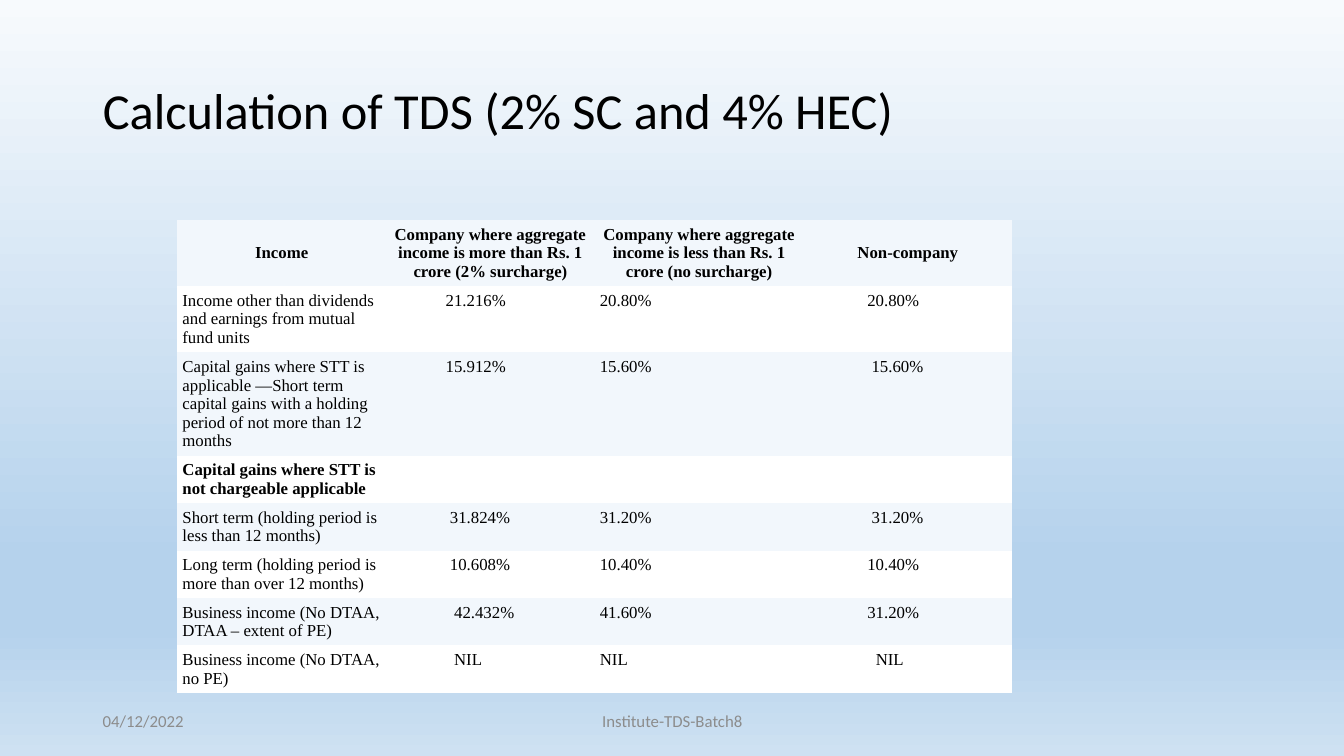
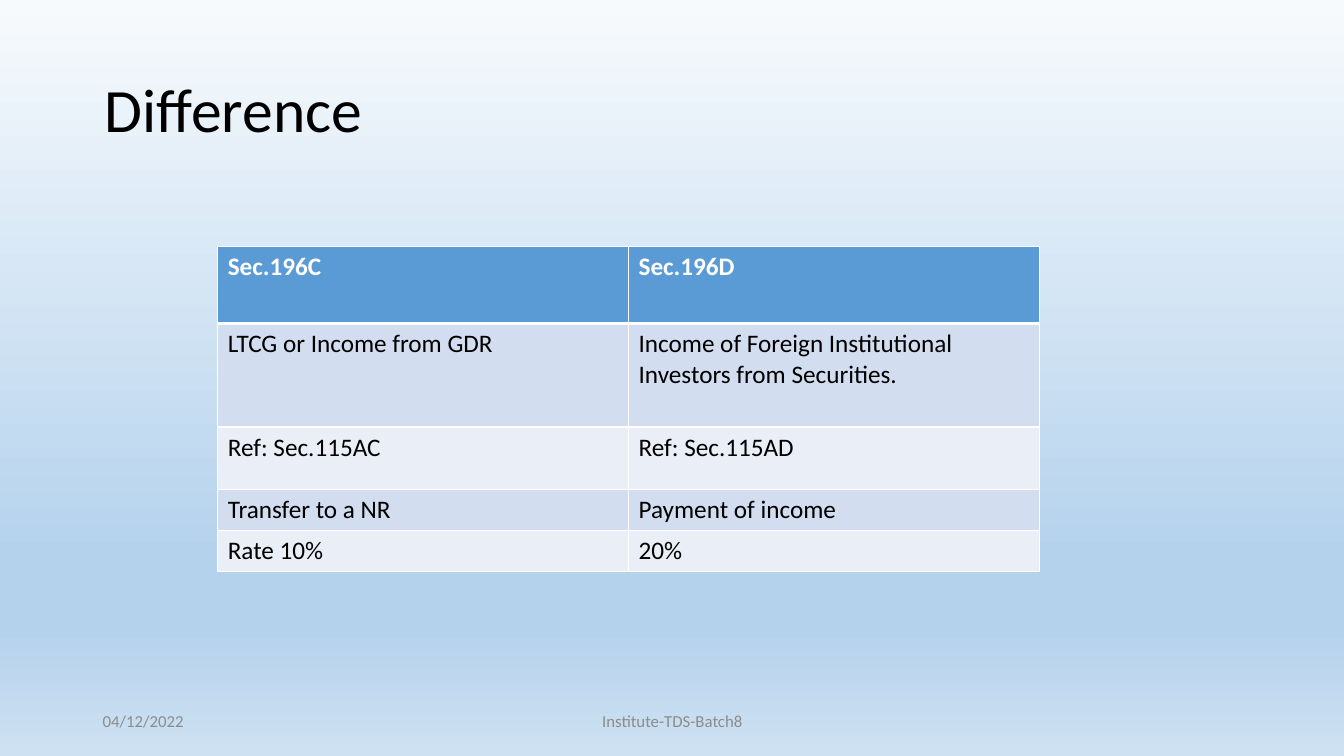
from copy import deepcopy

from lxml.etree import SubElement
from pptx import Presentation
from pptx.dml.color import RGBColor
from pptx.enum.text import MSO_ANCHOR as Anchor, MSO_AUTO_SIZE as AutoSize, PP_ALIGN as Align
from pptx.oxml.ns import qn
from pptx.util import Inches, Pt

BLACK = RGBColor(0x00, 0x00, 0x00)
WHITE = RGBColor(0xFF, 0xFF, 0xFF)
GREY = RGBColor(0x8C, 0x8C, 0x8C)
PALE_BLUE = RGBColor(0xF2, 0xF7, 0xFC)
HEADER_BLUE = RGBColor(0x5B, 0x9B, 0xD5)
BAND_DARK = RGBColor(0xD2, 0xDE, 0xEF)
BAND_LIGHT = RGBColor(0xEA, 0xEF, 0xF7)
SKY_TOP = RGBColor(0xF7, 0xFA, 0xFD)
SKY_DEEP = RGBColor(0xB5, 0xD2, 0xEC)
SKY_BOTTOM = RGBColor(0xCE, 0xE1, 0xF2)

SANS = "Calibri"
SERIF = "Times New Roman"
PLAIN_TABLE_STYLE = "{2D5ABB26-0587-4C30-8999-92F81FD0307C}"

presentation = Presentation()
presentation.slide_width = Inches(13.33)
presentation.slide_height = Inches(7.5)
COLUMN = presentation.slide_width / 100
ROW = presentation.slide_height / 100
title_only = presentation.slide_layouts[5]


def style_text(text_frame, size, color, font=SANS, bold=False, align=Align.LEFT):
    for paragraph in text_frame.paragraphs:
        paragraph.alignment = align
        for run in paragraph.runs:
            run.font.name = font
            run.font.size = Pt(size)
            run.font.bold = bold
            run.font.color.rgb = color


def add_table(slide, rows, left, top, column_width, row_heights, height):
    column_count = len(rows[0])
    frame = slide.shapes.add_table(
        len(rows), column_count, int(left * COLUMN), int(top * ROW),
        int(column_count * column_width * COLUMN), int(height * ROW))
    table = frame.table
    frame.element.find(".//" + qn("a:tableStyleId")).text = PLAIN_TABLE_STYLE
    for column in table.columns:
        column.width = int(column_width * COLUMN)
    for row, row_height, texts in zip(table.rows, row_heights, rows):
        row.height = int(row_height * ROW)
        for cell, text in zip(row.cells, texts):
            cell.text_frame.text = text
            cell.fill.solid()
    frame.height = int(height * ROW)
    return table


background = presentation.slide_master.background.fill
background.gradient()
background.gradient_angle = 270
stop_list = presentation.slide_master.element.find(".//" + qn("a:gsLst"))
for stop in list(stop_list):
    stop_list.append(deepcopy(stop))
sky = [(0, SKY_TOP), (0.74, SKY_DEEP), (0.83, SKY_DEEP), (1, SKY_BOTTOM)]
for stop, (position, color) in zip(background.gradient_stops, sky):
    stop.position = position
    stop.color.rgb = color

titles = [
    ("Calculation of TDS (2% SC and 4% HEC)", 36, 6.9, 5.33),
    ("Difference", 44, 7.05, 5.2),
]
for title_text, size, left, top in titles:
    title = presentation.slides.add_slide(title_only).shapes.title
    title.left, title.top = int(left * COLUMN), int(top * ROW)
    title.width, title.height = int(86.25 * COLUMN), int(19.33 * ROW)
    title.text_frame.text = title_text
    title.text_frame.auto_size = AutoSize.NONE
    title.text_frame.vertical_anchor = Anchor.MIDDLE
    title.text_frame.paragraphs[0].line_spacing = 0.9
    style_text(title.text_frame, size, BLACK)

rate_slide, difference_slide = presentation.slides

rate_rows = [
    ("Income", "Company where aggregate income is more than Rs. 1 crore (2% surcharge)",
     "Company where aggregate income is less than Rs. 1 crore (no surcharge)", "Non-company"),
    ("Income other than dividends and earnings from mutual fund units",
     "21.216%", "20.80%", "20.80%"),
    ("Capital gains where STT is applicable —Short term capital gains with a holding "
     "period of not more than 12 months", "15.912%", "15.60%", "15.60%"),
    ("Capital gains where STT is not chargeable applicable", "", "", ""),
    ("Short term (holding period is less than 12 months)", "31.824%", "31.20%", "31.20%"),
    ("Long term (holding period is more than over 12 months)", "10.608%", "10.40%", "10.40%"),
    ("Business income (No DTAA, DTAA – extent of PE)", "42.432%", "41.60%", "31.20%"),
    ("Business income (No DTAA, no PE)", "NIL", "NIL", "NIL"),
]
rate_heights = [8.8, 5.87, 11.2, 4.93, 4.93, 5.87, 4.93, 3.87]
surcharge_indents = [0, 39, 39, 0, 42, 42, 45, 45]
non_company_indents = [0, 42, 45, 0, 45, 42, 42, 48]
rate_table = add_table(rate_slide, rate_rows, 13.2, 29.07, 15.53, rate_heights, 69.2)
for row_index, row in enumerate(rate_table.rows):
    is_header = row_index == 0
    indents = (0, surcharge_indents[row_index], 0, non_company_indents[row_index])
    for cell, indent in zip(row.cells, indents):
        cell.fill.fore_color.rgb = WHITE if row_index % 2 else PALE_BLUE
        cell.margin_right = cell.margin_top = cell.margin_bottom = Inches(0.05)
        cell.margin_left = Inches(0.05) + Pt(indent)
        cell.vertical_anchor = Anchor.MIDDLE if is_header else Anchor.TOP
        style_text(cell.text_frame, 12, BLACK, SERIF, row_index in (0, 3),
                   Align.CENTER if is_header else Align.LEFT)

difference_rows = [
    ("Sec.196C", "Sec.196D"),
    ("LTCG or Income from GDR", "Income of Foreign Institutional Investors from Securities."),
    ("Ref: Sec.115AC", "Ref: Sec.115AD"),
    ("Transfer to a NR", "Payment of income"),
    ("Rate 10%", "20%"),
]
difference_heights = [10.2, 13.7, 8.27, 5.42, 5.42]
difference_table = add_table(difference_slide, difference_rows, 16.2, 32.6, 30.57,
                             difference_heights, sum(difference_heights))
for row_index, row in enumerate(difference_table.rows):
    is_header = row_index == 0
    band = BAND_DARK if row_index % 2 else BAND_LIGHT
    border_widths = {"a:lnL": 1, "a:lnR": 1, "a:lnT": 3 if row_index == 1 else 1,
                     "a:lnB": 3 if is_header else 1}
    for cell in row.cells:
        cell.fill.fore_color.rgb = HEADER_BLUE if is_header else band
        style_text(cell.text_frame, 18, WHITE if is_header else BLACK, bold=is_header)
        properties = cell._tc.get_or_add_tcPr()
        for position, (tag, width) in enumerate(border_widths.items()):
            border = SubElement(properties, qn(tag), w=str(Pt(width)))
            SubElement(SubElement(border, qn("a:solidFill")), qn("a:srgbClr"), val=str(WHITE))
            properties.insert(position, border)

footers = [
    ("Institute-TDS-Batch8", 33.15, 33.75, Align.CENTER),
    ("04/12/2022", 6.9, 22.5, Align.LEFT),
]
for slide in presentation.slides:
    for footer_text, left, width, align in footers:
        footer = slide.shapes.add_textbox(
            int(left * COLUMN), int(92.67 * ROW), int(width * COLUMN), int(5.33 * ROW))
        footer.text_frame.word_wrap = True
        footer.text_frame.vertical_anchor = Anchor.MIDDLE
        footer.text_frame.text = footer_text
        style_text(footer.text_frame, 12, GREY, align=align)

presentation.save("out.pptx")
